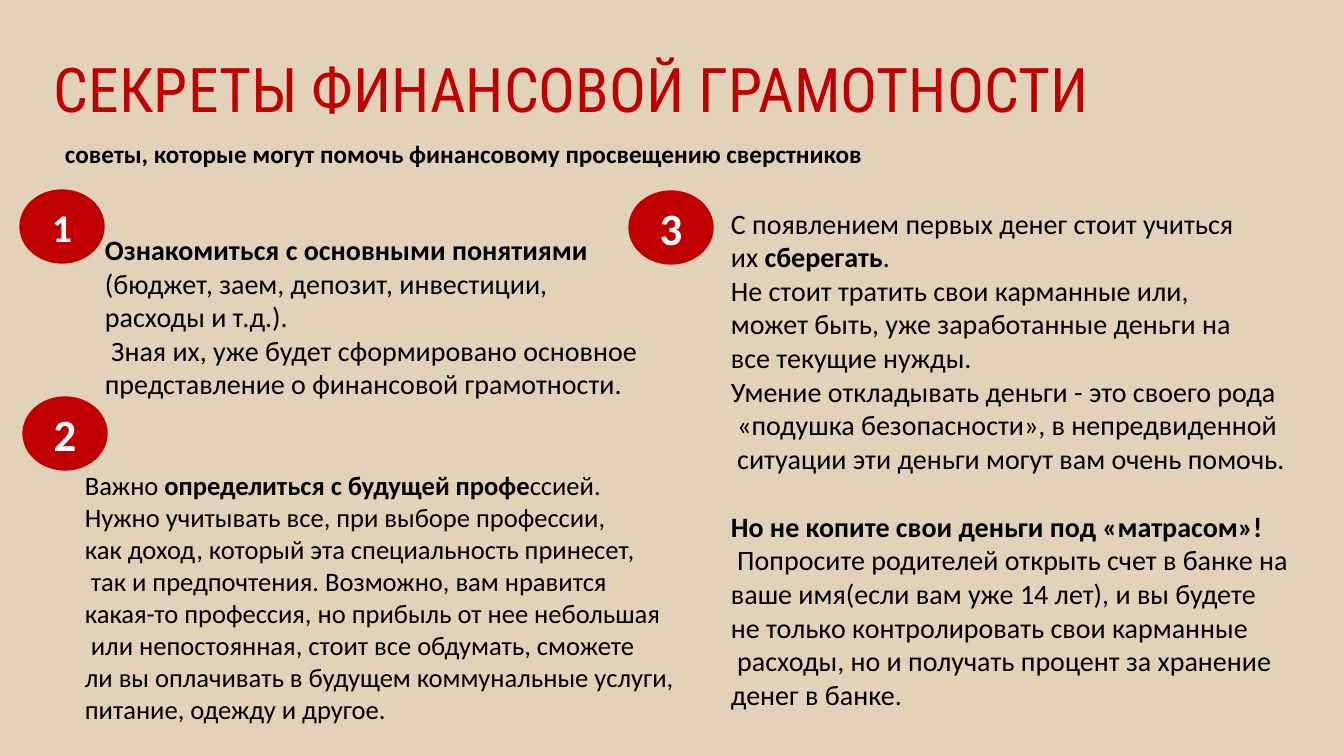
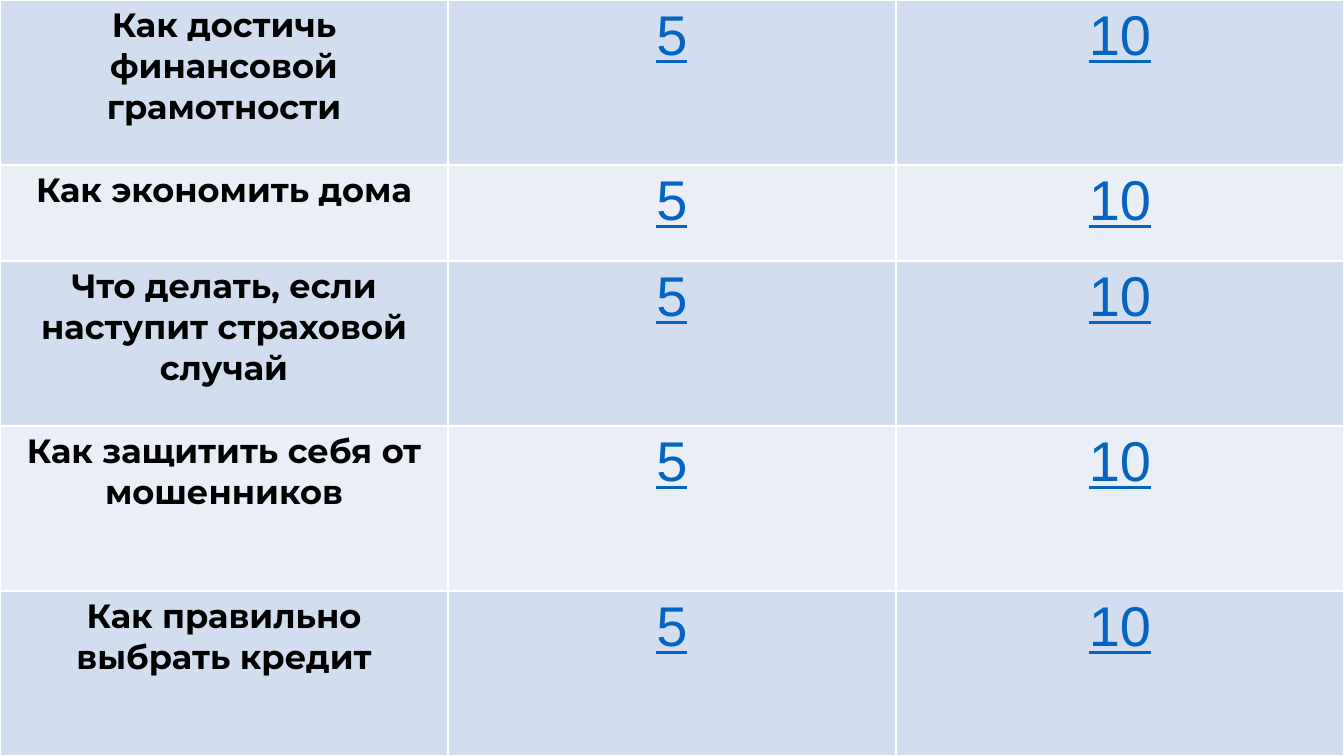
from lxml.etree import SubElement
from pptx import Presentation
from pptx.dml.color import RGBColor
from pptx.enum.shapes import MSO_SHAPE as Shape
from pptx.enum.text import MSO_ANCHOR as Anchor, PP_ALIGN as Align
from pptx.oxml.ns import qn
from pptx.util import Emu, Pt

SCALE = 12192000 / 1344
WIDTH, HEIGHT = 1344, 756
COLORS = {
    "sand": "E2D2B9", "red": "C00000", "black": "000000", "white": "FFFFFF",
    "link": "0563C1", "band": "D2DEEF", "light": "EAEFF7",
}
TITLE = {"name": "Roboto Condensed", "size": 44, "color": "red"}
SUBTITLE = {"name": "Calibri", "size": 18, "color": "black", "bold": True}
BODY = {"name": "Calibri", "size": 20, "color": "black"}
BADGE = {"name": "Calibri", "size": 32, "color": "white", "bold": True}
TOPIC = {"name": "Montserrat", "size": 24, "color": "black", "bold": True}
SCORE = {"name": "Arial", "size": 40, "color": "link", "underline": True}

INDENT = 49
BLANK_LINE = 24.4
BADGE_SIZE = (84, 73)
HEADING = "СЕКРЕТЫ ФИНАНСОВОЙ ГРАМОТНОСТИ"
SUBHEADING = "*советы, которые могут помочь финансовому просвещению сверстников*"
TIPS = [
    {"number": "1", "badge": (20, 190), "badge_size": 28, "box": (46, 227, 613, 179), "size": 20,
     "blocks": [[
         "*Ознакомиться с основными понятиями*",
         "(бюджет, заем, депозит, инвестиции,",
         "расходы и т.д.).",
         " Зная их, уже будет сформировано основное",
         "представление о финансовой грамотности.",
     ]]},
    {"number": "2", "badge": (23, 397), "badge_size": 32, "box": (26, 463, 660, 268), "size": 19,
     "blocks": [[
         "Важно *определиться с будущей профе*ссией.",
         "Нужно учитывать все, при выборе профессии,",
         "как доход, который эта специальность принесет,",
         " так и предпочтения. Возможно, вам нравится",
         "какая-то профессия, но прибыль от нее небольшая",
         " или непостоянная, стоит все обдумать, сможете",
         "ли вы оплачивать в будущем коммунальные услуги,",
         "питание, одежду и другое.",
     ]]},
    {"number": "3", "badge": (629, 191), "badge_size": 32, "box": (672, 199, 638, 519), "size": 20,
     "blocks": [[
         "С появлением первых денег стоит учиться",
         "их *сберегать*.",
         "Не стоит тратить свои карманные или,",
         "может быть, уже заработанные деньги на",
         "все текущие нужды.",
         "Умение откладывать деньги - это своего рода",
         " «подушка безопасности», в непредвиденной",
         " ситуации эти деньги могут вам очень помочь.",
     ], [
         "*Но не копите свои деньги под «матрасом»!*",
         " Попросите родителей открыть счет в банке на",
         "ваше имя(если вам уже 14 лет), и вы будете",
         "не только контролировать свои карманные",
         " расходы, но и получать процент за хранение",
         "денег в банке.",
     ]]},
]
SCORES = ["5", "10"]
TOPICS = [
    ("Как достичь финансовой грамотности", 165),
    ("Как экономить дома", 96),
    ("Что делать, если наступит страховой случай", 165),
    ("Как защитить себя от мошенников", 165),
    ("Как правильно выбрать кредит", 165),
]


def px(*lengths):
    return [Emu(round(length * SCALE)) for length in lengths]


def rgb(name):
    return RGBColor.from_string(COLORS[name])


def format_font(font, style):
    values = {"bold": False, **style, "size": Pt(style["size"])}
    font.color.rgb = rgb(values.pop("color"))
    for name, value in values.items():
        setattr(font, name, value)


def write(paragraph, text, style, **layout):
    for name, value in layout.items():
        setattr(paragraph, name, value)
    for index, part in enumerate(text.split("*")):
        if part:
            run = paragraph.add_run()
            run.text = part
            format_font(run.font, {**style, "bold": True} if index % 2 else style)


def add_slide(presentation):
    slide = presentation.slides.add_slide(presentation.slide_layouts[6])
    slide.background.fill.solid()
    slide.background.fill.fore_color.rgb = rgb("sand")
    return slide


def add_text(slide, box, blocks, style, anchor=Anchor.MIDDLE, indent=0, **layout):
    frame = slide.shapes.add_textbox(*px(*box)).text_frame
    frame.word_wrap = True
    frame.vertical_anchor = anchor
    paragraph = None
    for block in blocks:
        for index, line in enumerate(block):
            gap = BLANK_LINE if paragraph is not None and index == 0 else 0
            paragraph = frame.paragraphs[0] if paragraph is None else frame.add_paragraph()
            write(paragraph, line, style, space_before=Pt(gap), **layout)
            paragraph._p.get_or_add_pPr().set("indent", str(px(indent)[0]))


def add_badge(slide, tip):
    badge = slide.shapes.add_shape(Shape.OVAL, *px(*tip["badge"], *BADGE_SIZE))
    badge.shadow.inherit = False
    badge.fill.solid()
    badge.fill.fore_color.rgb = badge.line.color.rgb = rgb("red")
    badge.line.width = Pt(1)
    badge.text_frame.vertical_anchor = Anchor.MIDDLE
    style = {**BADGE, "size": tip["badge_size"]}
    write(badge.text_frame.paragraphs[0], tip["number"], style, alignment=Align.CENTER)


def add_borders(cell):
    properties = cell._tc.get_or_add_tcPr()
    for side in ("lnL", "lnR", "lnT", "lnB"):
        line = SubElement(properties, qn(f"a:{side}"), w=str(Pt(1)))
        fill = SubElement(line, qn("a:solidFill"))
        SubElement(fill, qn("a:srgbClr"), val=COLORS["white"])


def build_tips(presentation):
    slide = add_slide(presentation)
    add_text(slide, (44, 20, 1159, 146), [[HEADING]], TITLE, line_spacing=0.9)
    add_text(slide, (55, 133, 941, 40), [[SUBHEADING]], SUBTITLE, Anchor.TOP)
    for tip in TIPS:
        add_text(slide, tip["box"], tip["blocks"], {**BODY, "size": tip["size"]}, indent=INDENT)
    for tip in TIPS:
        add_badge(slide, tip)


def build_quiz(presentation):
    slide = add_slide(presentation)
    columns = 1 + len(SCORES)
    table = slide.shapes.add_table(len(TOPICS), columns, *px(0, 0, WIDTH, HEIGHT)).table
    table.first_row = table.horz_banding = False
    for column in table.columns:
        column.width = px(WIDTH / columns)[0]
    for row, (topic, height) in enumerate(TOPICS):
        table.rows[row].height = px(height)[0]
        for column, text in enumerate([topic, *SCORES]):
            cell = table.cell(row, column)
            add_borders(cell)
            cell.fill.solid()
            cell.fill.fore_color.rgb = rgb("light" if row % 2 else "band")
            style = SCORE if column else TOPIC
            write(cell.text_frame.paragraphs[0], text, style, alignment=Align.CENTER)


def main():
    """Build the financial literacy slides."""
    presentation = Presentation()
    presentation.slide_width, presentation.slide_height = px(WIDTH, HEIGHT)
    build_tips(presentation)
    build_quiz(presentation)
    presentation.save("out.pptx")


if __name__ == "__main__":
    main()
